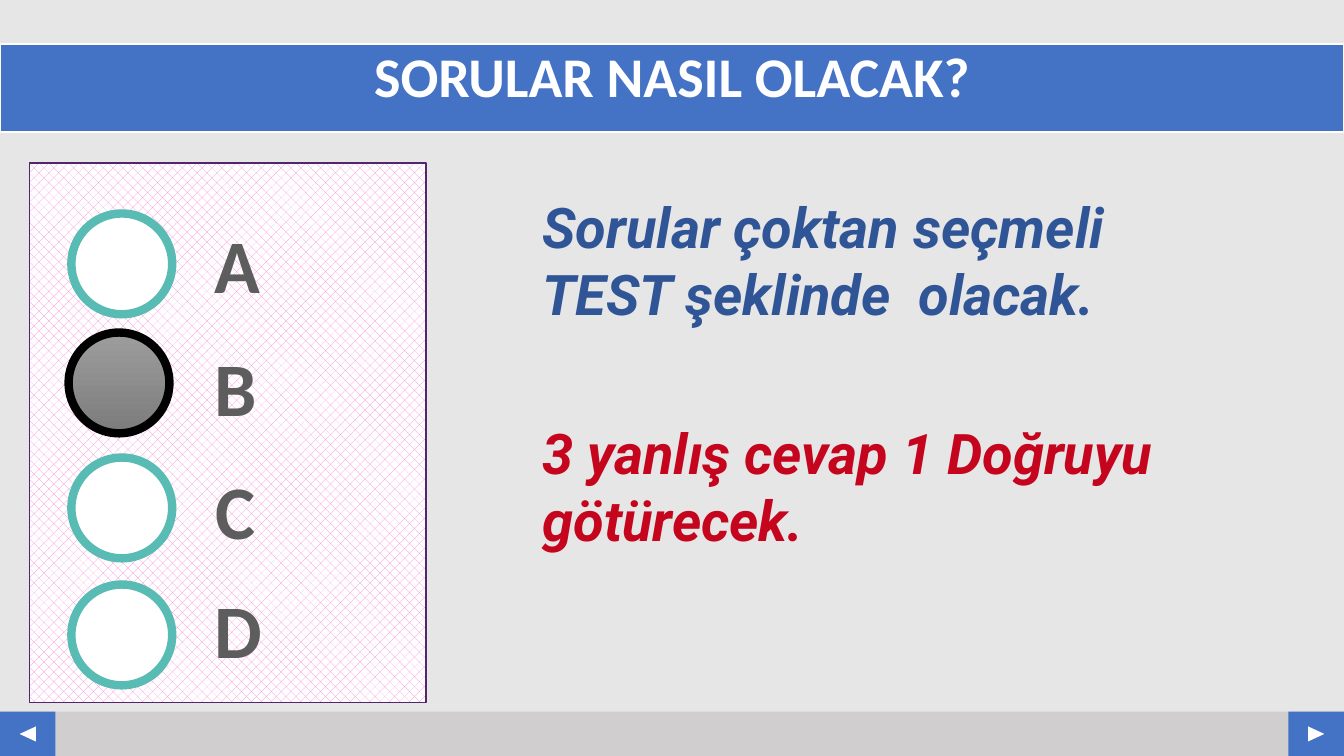
import pptx
import pptx.dml.color
import pptx.enum.dml
import pptx.enum.shapes
import pptx.enum.text
import pptx.util

Cm = pptx.util.Cm
Pt = pptx.util.Pt
PRESET = pptx.enum.shapes.MSO_SHAPE
ALIGN = pptx.enum.text.PP_ALIGN
ANCHOR = pptx.enum.text.MSO_ANCHOR

WIDTH, HEIGHT = 33.87, 19.05
FOOTER_TOP, FOOTER_HEIGHT, BUTTON_WIDTH = 17.93, 1.12, 1.4
CIRCLE_SIZE = 2.54
COLORS = {
    "background": "E7E6E6",
    "footer": "D0CECE",
    "blue": "4472C4",
    "white": "FFFFFF",
    "pink": "FB85D4",
    "purple": "52256D",
    "teal": "58BBB4",
    "black": "000000",
    "mark_top": "9D9D9D",
    "mark_bottom": "7C7C7C",
    "letter": "5D5D5D",
    "navy": "2F5597",
    "red": "C5041D",
}


def rgb(name):
    return pptx.dml.color.RGBColor.from_string(COLORS[name])


def style_shape(shape, fill=None, line=None, line_width=1):
    if fill:
        shape.fill.solid()
        shape.fill.fore_color.rgb = rgb(fill)
    if line:
        shape.line.color.rgb = rgb(line)
        shape.line.width = Pt(line_width)
    else:
        shape.line.fill.background()


def add_shape(slide, preset, left, top, width, height, rotation=0, **style):
    shape = slide.shapes.add_shape(preset, Cm(left), Cm(top), Cm(width), Cm(height))
    shape.shadow.inherit = False
    shape.rotation = rotation
    style_shape(shape, **style)
    return shape


def write_text(shape, text, font="Calibri", size=40, color="white", italic=False,
               align=ALIGN.CENTER, anchor=ANCHOR.TOP, spacing=1.0,
               wrap=True, margins=(0.25, 0.13)):
    frame = shape.text_frame
    frame.word_wrap = wrap
    frame.auto_size = pptx.enum.text.MSO_AUTO_SIZE.NONE
    frame.vertical_anchor = anchor
    frame.margin_left = frame.margin_right = Cm(margins[0])
    frame.margin_top = frame.margin_bottom = Cm(margins[1])
    paragraph = frame.paragraphs[0]
    paragraph.alignment = align
    paragraph.line_spacing = spacing
    run = paragraph.add_run()
    run.text = text
    run.font.name = font
    run.font.size = Pt(size)
    run.font.bold = True
    run.font.italic = italic
    run.font.color.rgb = rgb(color)


def add_text(slide, text, left, top, width, height, **text_format):
    box = slide.shapes.add_textbox(Cm(left), Cm(top), Cm(width), Cm(height))
    write_text(box, text, **text_format)


def add_title(slide, text):
    title = slide.shapes.title
    title.left, title.top = Cm(0), Cm(1.12)
    title.width, title.height = Cm(WIDTH), Cm(2.21)
    style_shape(title, fill="blue", line="white", line_width=1.5)
    write_text(title, text, spacing=0.9)


def add_footer(slide):
    add_shape(slide, PRESET.RECTANGLE, 0, FOOTER_TOP, WIDTH, FOOTER_HEIGHT, fill="footer")
    for left, rotation in ((0, 270), (WIDTH - BUTTON_WIDTH, 90)):
        add_shape(slide, PRESET.RECTANGLE, left, FOOTER_TOP,
                  BUTTON_WIDTH, FOOTER_HEIGHT, fill="blue")
        add_shape(slide, PRESET.ISOSCELES_TRIANGLE, left + 0.51, FOOTER_TOP + 0.36,
                  0.38, 0.41, rotation=rotation, fill="white")


def add_panel(slide):
    panel = add_shape(slide, PRESET.RECTANGLE, 0.74, 4.11, 10, 13.59, line="purple")
    panel.fill.patterned()
    panel.fill.pattern = pptx.enum.dml.MSO_PATTERN.PERCENT_30
    panel.fill.fore_color.rgb = rgb("pink")
    panel.fill.back_color.rgb = rgb("white")


def add_choice(slide, letter, circle_top, letter_top, letter_width, marked):
    circle = add_shape(slide, PRESET.OVAL, 1.73 if marked else 1.8, circle_top,
                       CIRCLE_SIZE, CIRCLE_SIZE, fill="white",
                       line="black" if marked else "teal", line_width=6)
    if marked:
        circle.fill.gradient()
        circle.fill.gradient_angle = 270
        for stop, color in zip(circle.fill.gradient_stops, ("mark_top", "mark_bottom")):
            stop.color.rgb = rgb(color)
    add_text(slide, letter, 5.13, letter_top, letter_width, 2.57,
             size=54, color="letter", wrap=False)


def add_statement(slide, text, top, color):
    add_text(slide, text, 13.34, top, 18.01, 3.76, font="Roboto", color=color,
             italic=True, align=ALIGN.LEFT, anchor=ANCHOR.MIDDLE, margins=(0.33, 0.18))


def main():
    presentation = pptx.Presentation()
    presentation.slide_width = Cm(WIDTH)
    presentation.slide_height = Cm(HEIGHT)
    slide = presentation.slides.add_slide(presentation.slide_layouts[5])
    slide.background.fill.solid()
    slide.background.fill.fore_color.rgb = rgb("background")

    add_footer(slide)
    add_title(slide, "SORULAR NASIL OLACAK?")
    add_panel(slide)
    choices = (
        ("A", 5.38, 5.36, 1.7),
        ("B", 8.38, 8.46, 1.6),
        ("C", 11.53, 11.56, 1.6),
        ("D", 14.73, 14.55, 1.73),
    )
    for letter, circle_top, letter_top, letter_width in choices:
        add_choice(slide, letter, circle_top, letter_top, letter_width, letter == "B")
    add_statement(slide, "Sorular çoktan seçmeli TEST şeklinde  olacak.", 4.67, "navy")
    add_statement(slide, "3 yanlış cevap 1 Doğruyu götürecek.", 10.36, "red")
    presentation.save("out.pptx")


if __name__ == "__main__":
    main()
